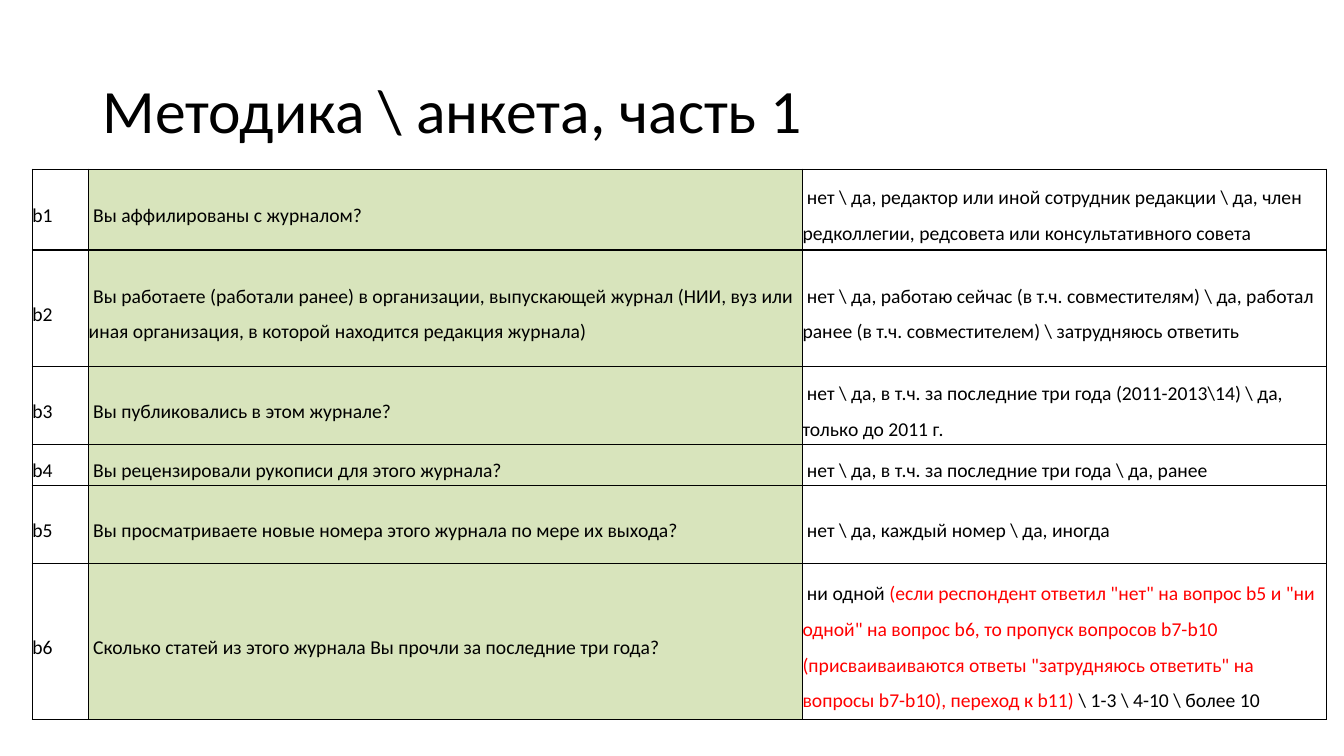
from lxml import etree
from pptx import Presentation
from pptx import util as u
from pptx.dml.color import RGBColor
from pptx.enum import text
from pptx.oxml import ns

BLACK = RGBColor(0x00, 0x00, 0x00)
WHITE = RGBColor(0xFF, 0xFF, 0xFF)
RED = RGBColor(0xFF, 0x00, 0x00)
GREEN = RGBColor(0xD8, 0xE4, 0xBC)
FONT = "Calibri"

TITLE = "Методика \\ анкета, часть 1"
ROWS = [
    (0.8, "Вы аффилированы с журналом?",
     [("нет \\ да, редактор или иной сотрудник редакции \\ да, член "
       "редколлегии, редсовета или консультативного совета", BLACK)]),
    (1.16, "Вы работаете (работали ранее) в организации, выпускающей журнал "
     "(НИИ, вуз или иная организация, в которой находится редакция журнала)",
     [("нет \\ да, работаю сейчас (в т.ч. совместителям) \\ да, работал "
       "ранее (в т.ч. совместителем) \\ затрудняюсь ответить", BLACK)]),
    (0.77, "Вы публиковались в этом журнале?",
     [("нет \\ да, в т.ч. за последние три года (2011-2013\\14) \\ да, "
       "только до 2011 г.", BLACK)]),
    (0.41, "Вы рецензировали рукописи для этого журнала?",
     [("нет \\ да, в т.ч. за последние три года \\ да, ранее", BLACK)]),
    (0.77, "Вы просматриваете новые номера этого журнала по мере их выхода?",
     [("нет \\ да, каждый номер \\ да, иногда", BLACK)]),
    (1.55, "Сколько статей из этого журнала Вы прочли за последние три года?",
     [("ни одной ", BLACK),
      ("(если респондент ответил \"нет\" на вопрос b5 и \"ни одной\" на "
       "вопрос b6, то пропуск вопросов b7-b10 (присваиваиваются ответы "
       "\"затрудняюсь ответить\" на вопросы b7-b10), переход к b11)", RED),
      (" \\ 1-3 \\ 4-10 \\ более 10", BLACK)]),
]
COLS = [0.56, 7.08, 5.2]


def write(frame, runs, size=14, space=1.5):
    frame.word_wrap = True
    para = frame.paragraphs[0]
    para.line_spacing = space
    for words, color in runs:
        run = para.add_run()
        run.text = words
        run.font.name = FONT
        run.font.size = u.Pt(size)
        run.font.color.rgb = color


def border(cell):
    props = cell._tc.get_or_add_tcPr()
    for side in ("lnL", "lnR", "lnT", "lnB"):
        line = etree.SubElement(props, ns.qn("a:" + side), w=str(u.Pt(1)))
        fill = etree.SubElement(line, ns.qn("a:solidFill"))
        etree.SubElement(fill, ns.qn("a:srgbClr"), val=str(BLACK))


def fill_cell(cell, runs, color=WHITE):
    cell.margin_left = cell.margin_right = 0
    cell.margin_top = cell.margin_bottom = 0
    cell.vertical_anchor = text.MSO_ANCHOR.MIDDLE
    border(cell)
    cell.fill.solid()
    cell.fill.fore_color.rgb = color
    write(cell.text_frame, runs)


def main():
    deck = Presentation()
    deck.slide_width, deck.slide_height = u.Inches(13.33), u.Inches(7.5)
    slide = deck.slides.add_slide(deck.slide_layouts[6])

    title = slide.shapes.add_textbox(
        u.Inches(0.92), u.Inches(0.4), u.Inches(11.5), u.Inches(1.45))
    title.text_frame.vertical_anchor = text.MSO_ANCHOR.MIDDLE
    write(title.text_frame, [(TITLE, BLACK)], size=44, space=0.9)

    high = sum(row[0] for row in ROWS)
    table = slide.shapes.add_table(
        len(ROWS), len(COLS), u.Inches(0.32), u.Inches(1.68),
        u.Inches(sum(COLS)), u.Inches(high)).table
    table.first_row = table.horz_banding = False
    for col, wide in zip(table.columns, COLS):
        col.width = u.Inches(wide)
    for i, (tall, query, reply) in enumerate(ROWS):
        table.rows[i].height = u.Inches(tall)
        first, *rest = reply
        fill_cell(table.cell(i, 0), [(f"b{i + 1}", BLACK)])
        fill_cell(table.cell(i, 1), [(" " + query, BLACK)], GREEN)
        fill_cell(table.cell(i, 2), [(" " + first[0], first[1]), *rest])

    deck.save("out.pptx")


if __name__ == "__main__":
    main()
